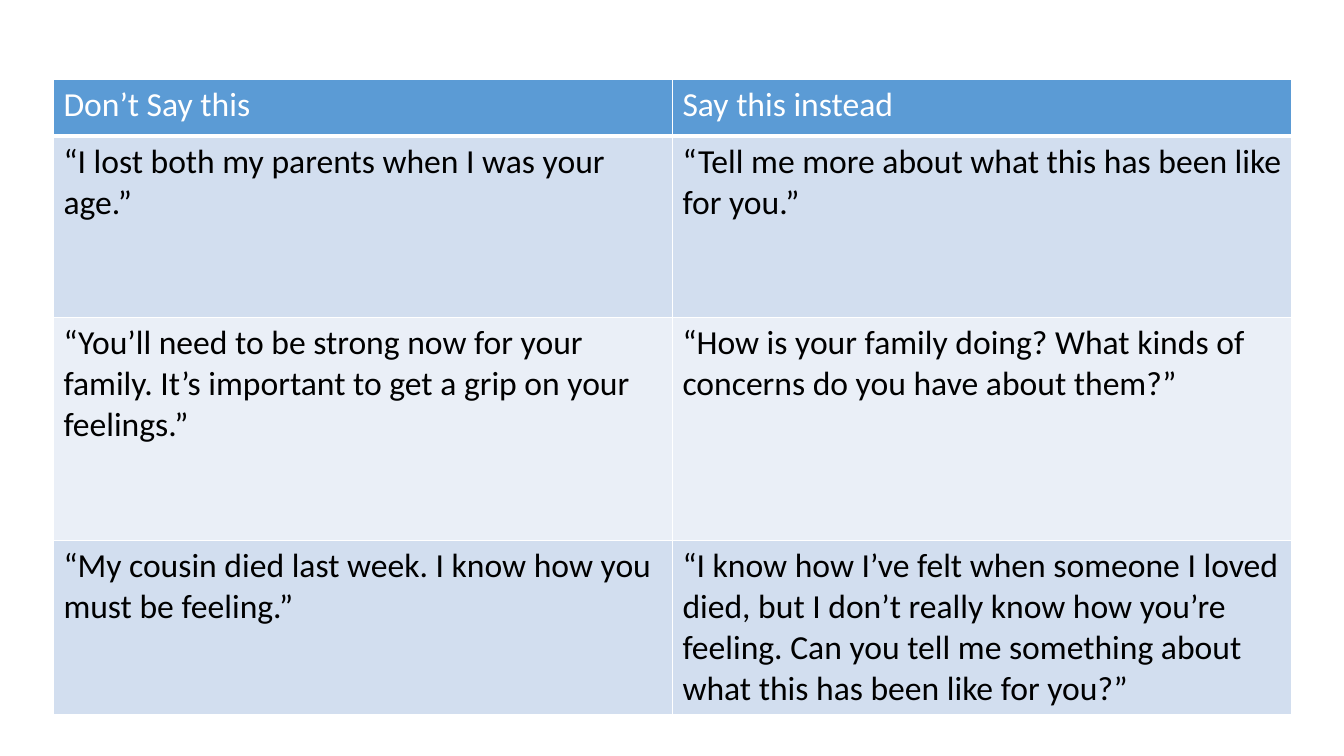
from dataclasses import dataclass

from lxml import etree
from pptx import Presentation
from pptx.dml.color import RGBColor
from pptx.oxml.ns import qn
from pptx.util import Inches, Pt

BLANK_LAYOUT = 6


@dataclass(frozen=True)
class Theme:
    font: str = "Calibri"
    text_size: float = 24
    header_fill: str = "5B9BD5"
    header_text: str = "FFFFFF"
    body_fills: tuple[str, str] = ("D2DEEF", "EAEFF7")
    body_text: str = "000000"
    border: str = "FFFFFF"
    border_width: float = 1
    header_rule_width: float = 3


@dataclass(frozen=True)
class Advice:
    avoid: str
    instead: str
    height: float


THEME = Theme()

ADVICE_ROWS = [
    Advice("Don’t Say this", "Say this instead", 0.56),
    Advice("“I lost both my parents when I was your age.”",
           "“Tell me more about what this has been like for you.”", 1.8),
    Advice("“You’ll need to be strong now for your family. "
           "It’s important to get a grip on your feelings.”",
           "“How is your family doing? What kinds of concerns "
           "do you have about them?”", 2.21),
    Advice("“My cousin died last week. I know how you must be feeling.”",
           "“I know how I’ve felt when someone I loved died, but I don’t really "
           "know how you’re feeling. Can you tell me something about what this "
           "has been like for you?”", 1.7),
]

TABLE_LEFT, TABLE_TOP = 0.53, 0.79
COLUMN_WIDTH = 6.14


def write_text(frame, text: str, *, color: str, size: float = THEME.text_size,
               font: str = THEME.font, bold: bool = False) -> None:
    run = frame.paragraphs[0].add_run()
    run.text = text
    run.font.name = font
    run.font.size = Pt(size)
    run.font.bold = bold
    run.font.color.rgb = RGBColor.from_string(color)


def add_borders(cell, bottom_width: float) -> None:
    """Borders must precede the fill in the cell properties."""
    properties = cell._tc.get_or_add_tcPr()
    widths = {"a:lnL": THEME.border_width, "a:lnR": THEME.border_width,
              "a:lnT": THEME.border_width, "a:lnB": bottom_width}
    for side, width in widths.items():
        line = etree.SubElement(properties, qn(side), w=str(Pt(width)))
        fill = etree.SubElement(line, qn("a:solidFill"))
        etree.SubElement(fill, qn("a:srgbClr"), val=THEME.border)


def format_cell(cell, text: str, row_index: int) -> None:
    is_header = row_index == 0
    add_borders(cell, THEME.header_rule_width if is_header else THEME.border_width)
    fill_color = THEME.header_fill if is_header else THEME.body_fills[(row_index - 1) % 2]
    cell.fill.solid()
    cell.fill.fore_color.rgb = RGBColor.from_string(fill_color)
    write_text(cell.text_frame, text,
               color=THEME.header_text if is_header else THEME.body_text)


def add_advice_table(slide, rows: list[Advice]) -> None:
    total_height = sum(advice.height for advice in rows)
    table = slide.shapes.add_table(
        len(rows), 2, Inches(TABLE_LEFT), Inches(TABLE_TOP),
        Inches(2 * COLUMN_WIDTH), Inches(total_height)).table
    for column in table.columns:
        column.width = Inches(COLUMN_WIDTH)
    for row_index, advice in enumerate(rows):
        table.rows[row_index].height = Inches(advice.height)
        for column_index, text in enumerate((advice.avoid, advice.instead)):
            format_cell(table.cell(row_index, column_index), text, row_index)


def main() -> None:
    # Slide
    presentation = Presentation()
    presentation.slide_width = Inches(13.33)
    presentation.slide_height = Inches(7.5)
    slide = presentation.slides.add_slide(presentation.slide_layouts[BLANK_LAYOUT])

    # Comparison of phrases
    add_advice_table(slide, ADVICE_ROWS)

    presentation.save("out.pptx")


if __name__ == "__main__":
    main()
